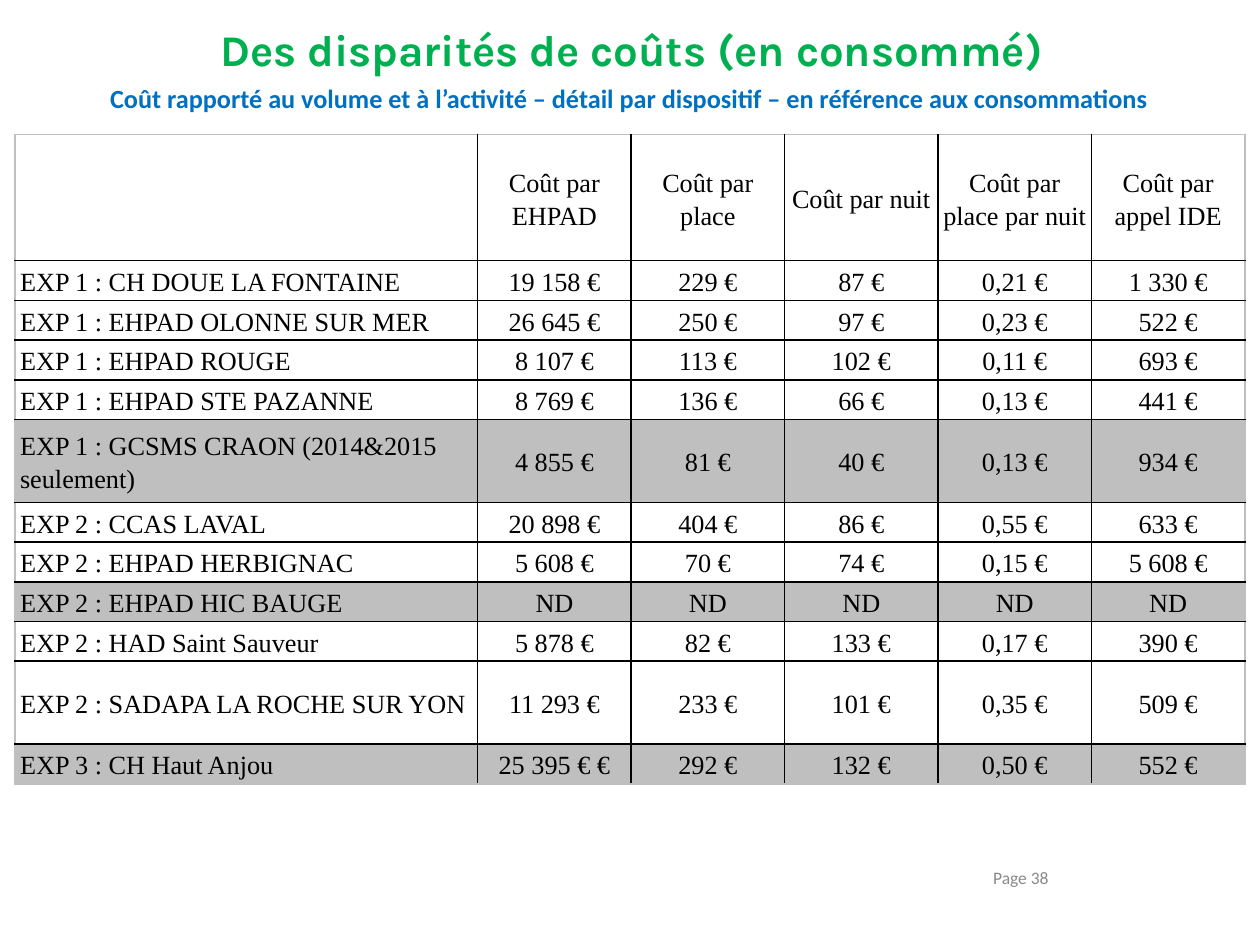
from lxml import etree
from pptx import Presentation, util as u
from pptx.dml.color import RGBColor
from pptx.enum import text
from pptx.oxml import ns

COLORS = {"title": "00B050", "subtitle": "0070C0", "page": "898989", "ink": "000000",
          "frame": "BFBFBF", "shaded": "BFBFBF", "plain": "FFFFFF"}
HEADERS = ["", "Coût par EHPAD", "Coût par place", "Coût par nuit",
           "Coût par place par nuit", "Coût par appel IDE"]
COSTS = [
    ["EXP 1 : CH DOUE LA FONTAINE", "19 158 €", "229 €", "87 €", "0,21 €", "1 330 €"],
    ["EXP 1 : EHPAD OLONNE SUR MER", "26 645 €", "250 €", "97 €", "0,23 €", "522 €"],
    ["EXP 1 : EHPAD ROUGE", "8 107 €", "113 €", "102 €", "0,11 €", "693 €"],
    ["EXP 1 : EHPAD STE PAZANNE", "8 769 €", "136 €", "66 €", "0,13 €", "441 €"],
    ["EXP 1 : GCSMS CRAON (2014&2015 seulement)", "4 855 €", "81 €", "40 €", "0,13 €", "934 €"],
    ["EXP 2 : CCAS LAVAL", "20 898 €", "404 €", "86 €", "0,55 €", "633 €"],
    ["EXP 2 : EHPAD HERBIGNAC", "5 608 €", "70 €", "74 €", "0,15 €", "5 608 €"],
    ["EXP 2 : EHPAD HIC BAUGE", "ND", "ND", "ND", "ND", "ND"],
    ["EXP 2 : HAD Saint Sauveur", "5 878 €", "82 €", "133 €", "0,17 €", "390 €"],
    ["EXP 2 : SADAPA LA ROCHE SUR YON", "11 293 €", "233 €", "101 €", "0,35 €", "509 €"],
    ["EXP 3 : CH Haut Anjou", "25 395 € €", "292 €", "132 €", "0,50 €", "552 €"],
]
ROWS = [HEADERS] + COSTS
TALL_ROWS = {5, 10}
SHADED_ROWS = {5, 8, 11}


def write(frame, words, font, size, color, align, bold=False):
    para = frame.paragraphs[0]
    para.text = words
    para.alignment = align
    para.font.name = font
    para.font.size = u.Pt(size)
    para.font.bold = bold
    para.font.color.rgb = RGBColor.from_string(COLORS[color])
    return para


def add_border(cell, side, color):
    line = etree.SubElement(cell._tc.get_or_add_tcPr(), ns.qn(f"a:ln{side}"), w=str(u.Pt(1)))
    fill = etree.SubElement(line, ns.qn("a:solidFill"))
    etree.SubElement(fill, ns.qn("a:srgbClr"), val=COLORS[color])


deck = Presentation()
deck.slide_width, deck.slide_height = u.Pt(720), u.Pt(540)
page = deck.slides.add_slide(deck.slide_layouts[5])

title = page.shapes.title
title.left, title.top, title.width, title.height = u.Pt(36.7), u.Pt(9.4), u.Pt(648), u.Pt(21.6)
title.text_frame.auto_size = text.MSO_AUTO_SIZE.NONE
title.text_frame.vertical_anchor = text.MSO_ANCHOR.TOP
write(title.text_frame, "Des disparités de coûts (en consommé)", "Karla", 25, "title",
      text.PP_ALIGN.CENTER, True)

subtitle = page.shapes.add_textbox(u.Pt(28), u.Pt(43.2), u.Pt(663), u.Pt(25.2))
subtitle.text_frame.word_wrap = True
write(subtitle.text_frame,
      "Coût rapporté au volume et à l’activité – détail par dispositif – en référence aux consommations",
      "Calibri", 15, "subtitle", text.PP_ALIGN.CENTER, True)

table = page.shapes.add_table(len(ROWS), len(HEADERS), u.Pt(8.6), u.Pt(77),
                              u.Pt(702.9), u.Pt(371.1)).table
for index, column in enumerate(table.columns):
    column.width = u.Pt(87.7 if index else 264.4)
for index, row in enumerate(table.rows):
    row.height = u.Pt(72 if index == 0 else 47.4 if index in TALL_ROWS else 22.7)

for r, values in enumerate(ROWS):
    for c, value in enumerate(values):
        cell = table.cell(r, c)
        cell.margin_left = cell.margin_right = u.Pt(2.9)
        cell.margin_top = cell.margin_bottom = 0
        cell.vertical_anchor = text.MSO_ANCHOR.MIDDLE
        outer = {"L": c == 0, "R": c == len(HEADERS) - 1, "T": r == 0, "B": r == len(ROWS) - 1}
        for side, on_frame in outer.items():
            add_border(cell, side, "frame" if on_frame else "ink")
        cell.fill.solid()
        cell.fill.fore_color.rgb = RGBColor.from_string(
            COLORS["shaded" if r in SHADED_ROWS else "plain"])
        align = text.PP_ALIGN.CENTER if c else text.PP_ALIGN.LEFT
        para = write(cell.text_frame, value, "Times New Roman", 15, "ink", align)
        para.line_spacing = 1.15

number = page.shapes.add_textbox(u.Pt(524.2), u.Pt(491), u.Pt(82), u.Pt(20.9))
number.text_frame.word_wrap = True
number.text_frame.vertical_anchor = text.MSO_ANCHOR.MIDDLE
write(number.text_frame, "Page 38", "Calibri", 10, "page", text.PP_ALIGN.RIGHT)

deck.save("out.pptx")
